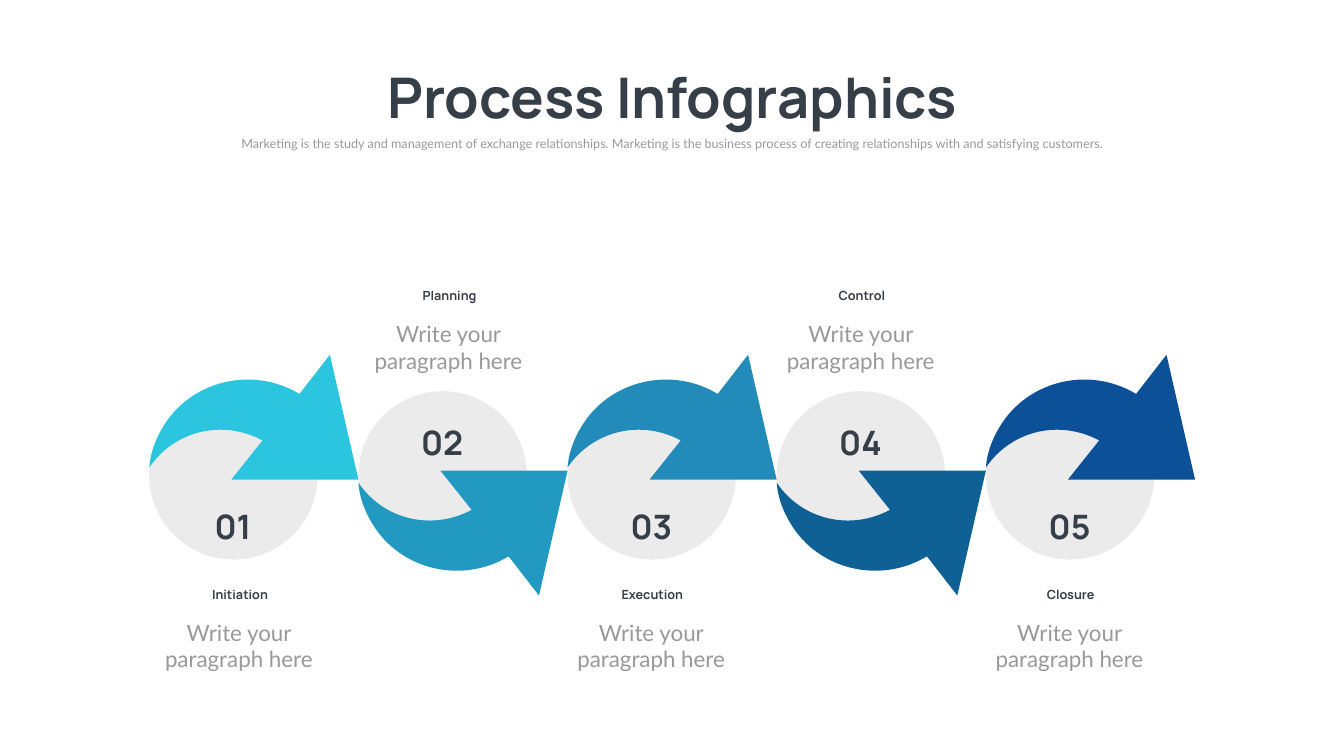
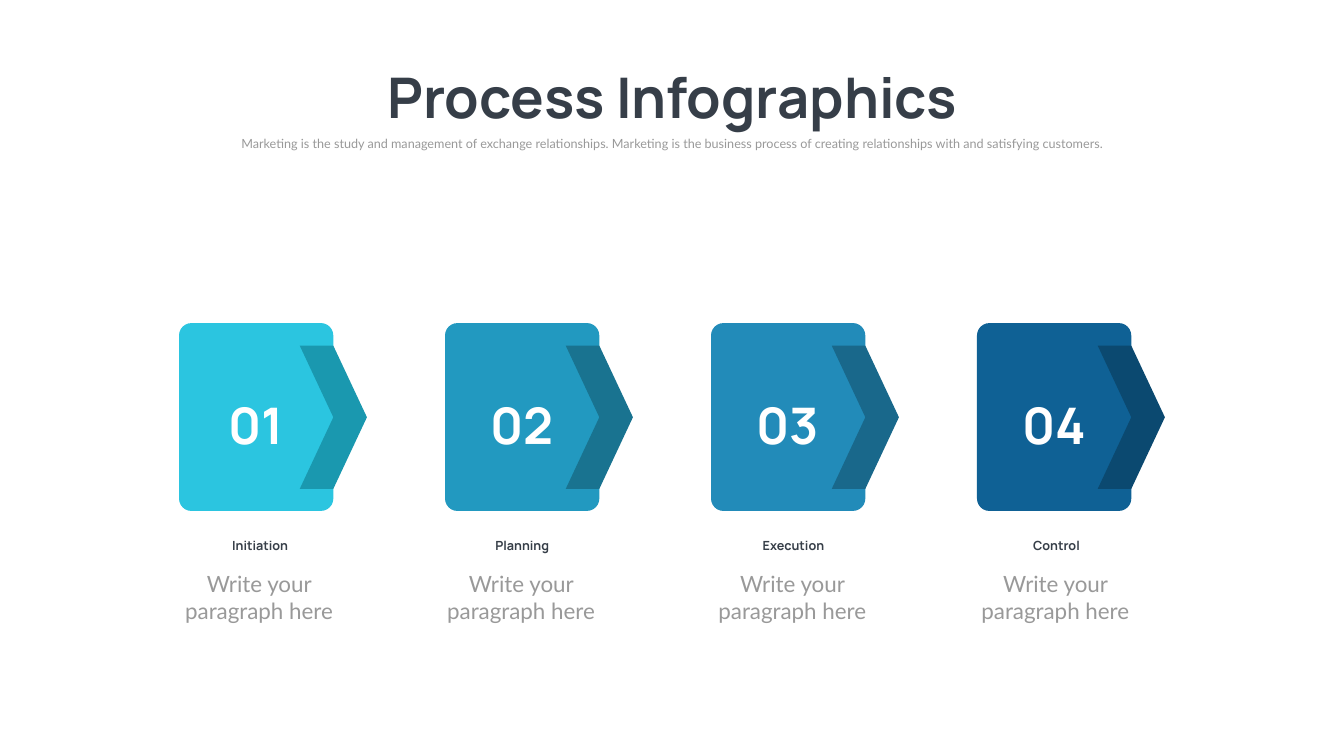
from pptx import Presentation
from pptx.dml.color import RGBColor
from pptx.enum.shapes import MSO_SHAPE
from pptx.enum.text import MSO_ANCHOR, MSO_AUTO_SIZE, PP_ALIGN
from pptx.oxml.xmlchemy import OxmlElement
from pptx.util import Pt

INK = RGBColor(0x36, 0x3E, 0x48)
GRAY = RGBColor(0x99, 0x99, 0x99)
PALE = RGBColor(0xEB, 0xEB, 0xEB)
WHITE = RGBColor(0xFF, 0xFF, 0xFF)
CYAN = RGBColor(0x2B, 0xC5, 0xE0)
TEAL = RGBColor(0x22, 0x99, 0xC0)
AZURE = RGBColor(0x22, 0x8B, 0xB9)
BLUE = RGBColor(0x0F, 0x61, 0x95)
NAVY = RGBColor(0x0C, 0x51, 0x98)
DARK_CYAN = RGBColor(0x1A, 0x98, 0xAF)
DARK_TEAL = RGBColor(0x19, 0x73, 0x90)
DARK_AZURE = RGBColor(0x19, 0x68, 0x8B)
DARK_BLUE = RGBColor(0x0B, 0x49, 0x70)

HEADING_FONT = "Manrope"
BODY_FONT = "Lato"

TITLE = "Process Infographics"
SUBTITLE = (
    "Marketing is the study and management of exchange relationships. "
    "Marketing is the business process of creating relationships with "
    "and satisfying customers."
)
DESCRIPTION = "Write your paragraph here"

ARROW_HEIGHT = 89.2
ARROW_START = (149.4, 89.2)
ARROW_OUTLINE = [
    (129, 0), (107.3, 28),
    (74.2, 8), (30.2, 18), (10.1, 51.1),
    (4.3, 60.5), (0.7, 70.6), (0, 80.6),
    (18, 54), (52.6, 46), (80.9, 61.2),
    (58.6, 89.2),
]
ARROW_CURVES = (2, 5, 8)


class Deck:
    def __init__(self):
        self.presentation = Presentation()
        self.presentation.slide_width = Pt(960)
        self.presentation.slide_height = Pt(540)
        self.slide = None

    def add_slide(self):
        layout = self.presentation.slide_layouts[0]
        self.slide = self.presentation.slides.add_slide(layout)
        title, subtitle = self.slide.placeholders
        self.place(title, 258.5, 41, 443.5, 104.4)
        self.set_text(title, TITLE, 40, INK, HEADING_FONT, True)
        self.place(subtitle, 105.1, 93.6, 749.5, 18)
        self.set_text(subtitle, SUBTITLE, 9, GRAY, BODY_FONT, False)

    def place(self, element, left, top, width, height):
        element.left, element.top = Pt(left), Pt(top)
        element.width, element.height = Pt(width), Pt(height)

    def set_text(self, element, text, size, color, font_name, bold):
        frame = element.text_frame
        frame.text = text
        frame.word_wrap = True
        frame.auto_size = MSO_AUTO_SIZE.SHAPE_TO_FIT_TEXT
        frame.vertical_anchor = MSO_ANCHOR.TOP
        paragraph = frame.paragraphs[0]
        paragraph.alignment = PP_ALIGN.CENTER
        paragraph.space_before = Pt(0)
        font = paragraph.runs[0].font
        font.name, font.size, font.bold = font_name, Pt(size), bold
        font.color.rgb = color

    def label(self, box, text, size, color, font_name=HEADING_FONT, bold=True):
        element = self.slide.shapes.add_textbox(*map(Pt, box))
        self.set_text(element, text, size, color, font_name, bold)

    def caption(self, left, top, name):
        self.label((left, top, 121, 18), name, 9, INK)
        self.label((left - 1.1, top + 22.7, 121.7, 46), DESCRIPTION, 16, GRAY,
                   BODY_FONT, False)

    def paint(self, element, color):
        element.shadow.inherit = False
        element.fill.solid()
        element.fill.fore_color.rgb = color
        element.line.fill.background()

    def shape(self, kind, box, color):
        element = self.slide.shapes.add_shape(kind, *map(Pt, box))
        self.paint(element, color)
        return element

    def arrow(self, left, top, color, downward):
        def locate(point):
            x, y = point
            return Pt(left + x), Pt(top + (ARROW_HEIGHT - y if downward else y))

        builder = self.slide.shapes.build_freeform(*locate(ARROW_START), scale=1.0)
        builder.add_line_segments([locate(p) for p in ARROW_OUTLINE], close=True)
        arrow = builder.convert_to_shape()
        segments = arrow.element.xpath(".//a:lnTo")
        for first in ARROW_CURVES:
            curve = OxmlElement("a:cubicBezTo")
            segments[first].addprevious(curve)
            for segment in segments[first:first + 3]:
                curve.append(segment[0])
                segment.getparent().remove(segment)
        self.paint(arrow, color)

    def save(self):
        self.presentation.save("out.pptx")


def build_arrow_process(deck):
    deck.add_slide()
    first_left, pitch = 106.6, 149.4
    stages = [
        ("Initiation", CYAN, 110.9),
        ("Planning", TEAL, 260.6),
        ("Execution", AZURE, 405.4),
        ("Control", BLUE, 555.1),
        ("Closure", NAVY, 704.2),
    ]
    for index in range(len(stages)):
        left = first_left + index * pitch
        deck.shape(MSO_SHAPE.OVAL, (left, 279.4, 120.3, 120.3), PALE)
    for index, (name, color, caption_left) in enumerate(stages):
        left = first_left + index * pitch
        downward = index % 2 == 1
        deck.arrow(left, 336.2 if downward else 253.4, color, downward)
        number_top = 298.1 if downward else 357.8
        deck.label((left + 26, number_top, 67.7, 36), f"{index + 1:02}", 24, INK)
        deck.caption(caption_left, 202.2 if downward else 415.7, name)


def build_card_process(deck):
    deck.add_slide()
    stages = [
        ("Initiation", CYAN, DARK_CYAN, 125.3),
        ("Planning", TEAL, DARK_TEAL, 312.5),
        ("Execution", AZURE, DARK_AZURE, 506.2),
        ("Control", BLUE, DARK_BLUE, 694.1),
    ]
    for index, (name, color, dark_color, caption_left) in enumerate(stages):
        left = 127.9 + index * 190
        card = deck.shape(MSO_SHAPE.ROUNDED_RECTANGLE,
                          (left, 230.8, 110.2, 134.2), color)
        card.adjustments[0] = 0.08
        deck.shape(MSO_SHAPE.CHEVRON, (left + 86.2, 246.9, 48, 102.3), dark_color)
        deck.label((left + 21.2, 277.9, 67.7, 51), f"{index + 1:02}", 36, WHITE)
        deck.caption(caption_left, 381, name)


def main():
    deck = Deck()
    build_arrow_process(deck)
    build_card_process(deck)
    deck.save()


if __name__ == "__main__":
    main()
